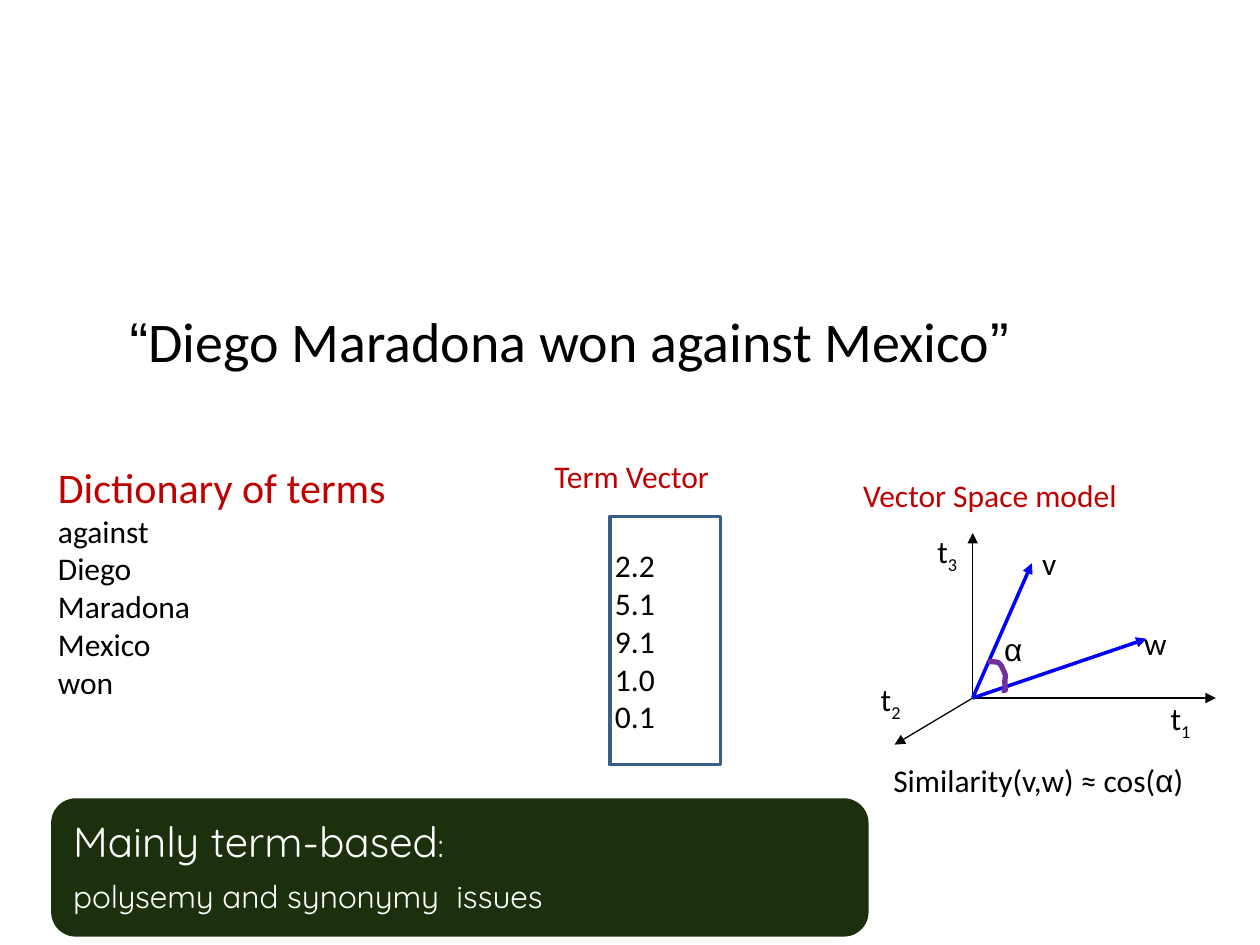
from dataclasses import dataclass

from lxml.etree import SubElement
from pptx import Presentation
from pptx.dml.color import RGBColor
from pptx.enum.shapes import MSO_CONNECTOR as Connector, MSO_SHAPE as Shape
from pptx.enum.text import MSO_ANCHOR as Anchor, PP_ALIGN as Align
from pptx.oxml.ns import qn
from pptx.util import Inches, Pt


@dataclass(frozen=True)
class Theme:
    black: str = "000000"
    white: str = "FFFFFF"
    heading: str = "C00000"
    frame: str = "395E89"
    vector: str = "0000FF"
    angle: str = "7030A0"
    banner: str = "1D300D"
    body_font: str = "Calibri"
    symbol_font: str = "Arial"
    banner_font: str = "Quicksand"
    quote_size: int = 32
    large_size: int = 24
    text_size: int = 18
    thin: float = 0.75
    medium: float = 2
    thick: float = 3


THEME = Theme()
ORIGIN = (7.72, 5.54)
AXIS_ENDS = [(9.65, 5.54), (7.72, 4.23), (7.1, 5.91)]
VECTOR_ENDS = [(9.1, 5.07), (8.19, 4.47)]
AXIS_LABELS = [("1", 9.25, 5.51), ("2", 6.95, 5.36), ("3", 7.4, 4.18)]
ANGLE_START = (7.84, 5.25)
ANGLE_CURVES = [
    [(7.91, 5.26), (7.92, 5.24), (7.95, 5.29)],
    [(7.96, 5.31), (7.98, 5.36), (7.98, 5.36)],
    [(7.96, 5.48), (8.01, 5.48), (7.95, 5.48)],
]
TERMS = ["against", "Diego", "Maradona", "Mexico", "won"]
WEIGHTS = ["2.2", "5.1", "9.1", "1.0", "0.1"]


def style_run(run, size=THEME.text_size, color=THEME.black, font=THEME.body_font):
    run.font.size = Pt(size)
    run.font.color.rgb = RGBColor.from_string(color)
    run.font.name = font


def add_run(paragraph, text, **style):
    run = paragraph.add_run()
    run.text = text
    style_run(run, **style)
    return run


def write_lines(text_frame, lines, **style):
    """Fill the frame with one left-aligned paragraph per line."""
    text_frame.text = "\n".join(lines)
    for paragraph in text_frame.paragraphs:
        paragraph.alignment = Align.LEFT
        for run in paragraph.runs:
            style_run(run, **style)


def set_frame(text_frame, margin=0.04, anchor=Anchor.TOP, wrap=True):
    text_frame.margin_left = text_frame.margin_right = Inches(margin)
    text_frame.margin_top = text_frame.margin_bottom = Inches(margin)
    text_frame.vertical_anchor = anchor
    text_frame.word_wrap = wrap


def add_text(slide, box, lines=(), anchor=Anchor.TOP, wrap=True, **style):
    text_frame = slide.shapes.add_textbox(*map(Inches, box)).text_frame
    set_frame(text_frame, anchor=anchor, wrap=wrap)
    if lines:
        write_lines(text_frame, lines, **style)
    return text_frame


def set_line(shape, color, width):
    shape.line.color.rgb = RGBColor.from_string(color)
    shape.line.width = Pt(width)


def add_panel(slide, kind, box, line, fill=None):
    shape = slide.shapes.add_shape(kind, *map(Inches, box))
    shape.shadow.inherit = False
    set_line(shape, line, THEME.medium)
    if fill:
        shape.fill.solid()
        shape.fill.fore_color.rgb = RGBColor.from_string(fill)
    else:
        shape.fill.background()
    return shape


def add_arrow(slide, start, end, color, width):
    points = map(Inches, (*start, *end))
    arrow = slide.shapes.add_connector(Connector.STRAIGHT, *points)
    set_line(arrow, color, width)
    SubElement(arrow.line._get_or_add_ln(), qn("a:tailEnd"), type="triangle")
    SubElement(arrow._element.spPr, qn("a:effectLst"))


def curve_points(start, first, second, end, steps=8):
    """Points along a cubic Bezier curve, without its start."""
    for step in range(1, steps + 1):
        t = step / steps
        factors = ((1 - t) ** 3, 3 * t * (1 - t) ** 2, 3 * t * t * (1 - t), t**3)
        yield tuple(
            Inches(sum(factor * value for factor, value in zip(factors, values)))
            for values in zip(start, first, second, end)
        )


def add_angle(slide):
    points, start = [], ANGLE_START
    for curve in ANGLE_CURVES:
        points.extend(curve_points(start, *curve))
        start = curve[-1]
    builder = slide.shapes.build_freeform(*map(Inches, ANGLE_START))
    builder.add_line_segments(points, close=False)
    angle = builder.convert_to_shape()
    angle.shadow.inherit = False
    angle.fill.background()
    set_line(angle, THEME.angle, THEME.thick)


def add_quote(slide):
    text_frame = add_text(slide, (0.93, 2.38, 8.17, 0.7))
    set_frame(text_frame, margin=0.1)
    text_frame.margin_top = text_frame.margin_bottom = Inches(0.05)
    paragraph = text_frame.paragraphs[0]
    for text, font in [
        ("“", THEME.symbol_font),
        ("Diego Maradona won against Mexico", THEME.body_font),
        ("”", THEME.symbol_font),
    ]:
        add_run(paragraph, text, size=THEME.quote_size, font=font)


def add_dictionary(slide):
    text_frame = add_text(slide, (0.42, 3.62, 3.33, 2.15), ["Dictionary of terms", *TERMS])
    heading = text_frame.paragraphs[0].runs[0]
    style_run(heading, size=THEME.large_size, color=THEME.heading)


def add_term_vector(slide):
    panel = add_panel(slide, Shape.RECTANGLE, (4.84, 4.1, 0.88, 1.97), THEME.frame)
    set_frame(panel.text_frame, anchor=Anchor.MIDDLE)
    write_lines(panel.text_frame, WEIGHTS)
    add_text(slide, (4.36, 3.59, 1.92, 0.42), ["Term Vector"], color=THEME.heading)


def add_vector_space(slide):
    add_text(slide, (6.81, 3.74, 3.04, 0.42), ["Vector Space model"], color=THEME.heading)
    for end in AXIS_ENDS:
        add_arrow(slide, ORIGIN, end, THEME.black, THEME.thin)
    for end in VECTOR_ENDS:
        add_arrow(slide, ORIGIN, end, THEME.vector, THEME.medium)
    for number, left, top in AXIS_LABELS:
        label = add_text(slide, (left, top, 0.26, 0.44), ["t"], wrap=False)
        subscript = add_run(label.paragraphs[0], number)
        subscript.font._element.set("baseline", "-25000")
    add_text(slide, (8.23, 4.28, 0.35, 0.39), ["v"])
    add_text(slide, (9.04, 4.91, 0.28, 0.39), ["w"], wrap=False)
    add_text(slide, (7.93, 4.96, 0.47, 0.39), ["α"], font=THEME.symbol_font)
    add_angle(slide)
    similarity = add_text(slide, (7.05, 5.99, 2.97, 0.4), ["Similarity(v,w) ≈ cos("], Anchor.MIDDLE)
    add_run(similarity.paragraphs[0], "α", font=THEME.symbol_font)
    add_run(similarity.paragraphs[0], ")")


def add_banner(slide):
    panel = add_panel(
        slide, Shape.ROUNDED_RECTANGLE, (0.42, 6.35, 6.46, 1.07), THEME.banner, THEME.banner
    )
    panel.adjustments[0] = 0.17
    style = {"color": THEME.white, "font": THEME.banner_font}
    lines = ["Mainly term-based", "polysemy and synonymy  issues"]
    text_frame = add_text(slide, (0.54, 6.35, 6.39, 1.03), lines, Anchor.MIDDLE, **style)
    heading, detail = text_frame.paragraphs
    heading.runs[0].font.size = Pt(THEME.large_size)
    add_run(heading, ":", **style)
    detail.line_spacing = 1.3


def main():
    presentation = Presentation()
    presentation.slide_width, presentation.slide_height = Inches(10), Inches(7.5)
    slide = presentation.slides.add_slide(presentation.slide_layouts[6])
    add_quote(slide)
    add_dictionary(slide)
    add_term_vector(slide)
    add_vector_space(slide)
    add_banner(slide)
    presentation.save("out.pptx")


if __name__ == "__main__":
    main()
